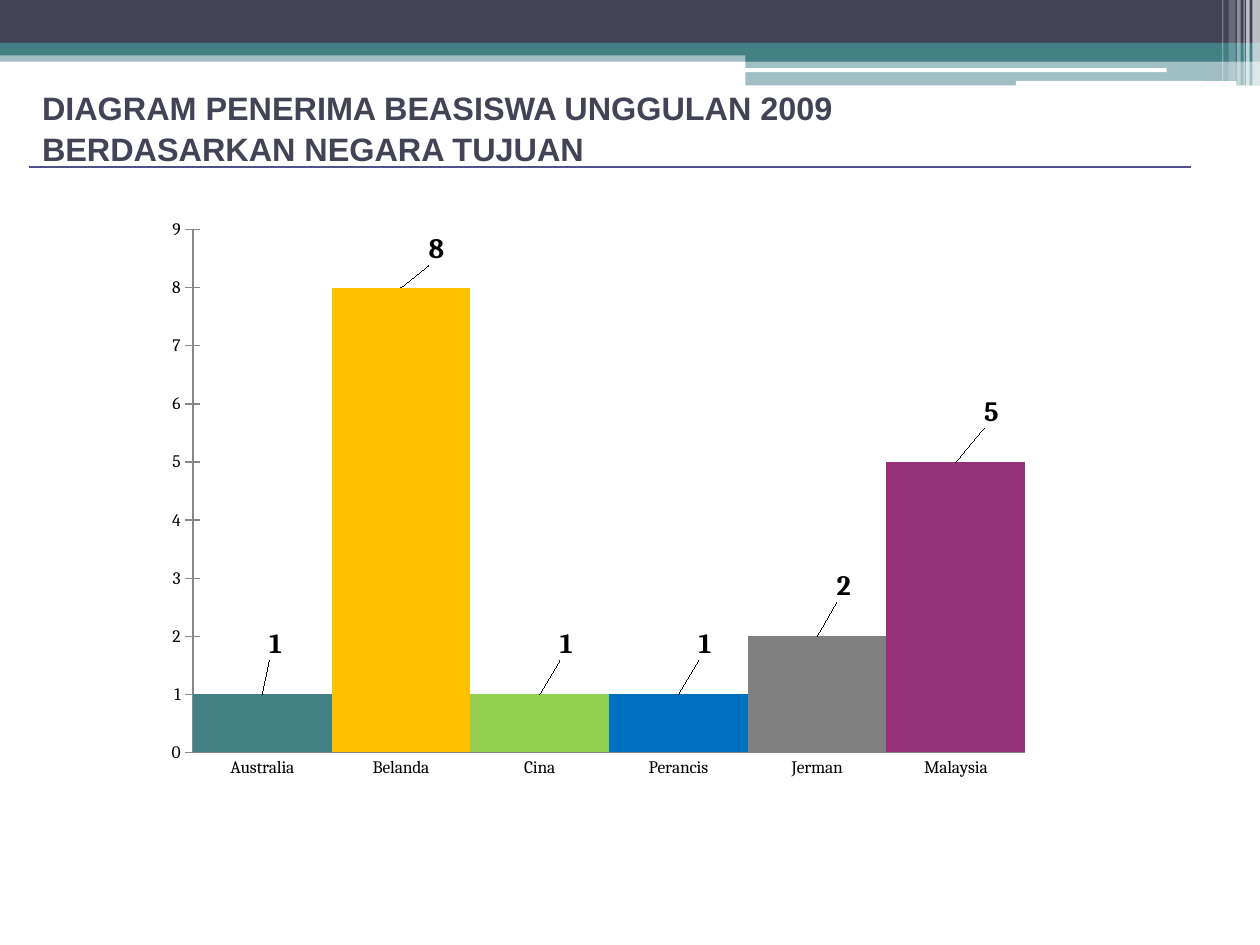
from lxml import etree
from pptx import Presentation
from pptx.chart.data import CategoryChartData
from pptx.dml.color import RGBColor
from pptx.enum.chart import XL_CHART_TYPE, XL_LABEL_POSITION, XL_TICK_MARK
from pptx.enum.shapes import MSO_CONNECTOR, MSO_SHAPE
from pptx.enum.text import MSO_ANCHOR, MSO_AUTO_SIZE, PP_ALIGN
from pptx.oxml import parse_xml
from pptx.oxml.ns import nsdecls, qn
from pptx.util import Pt

RECTANGLE, ROUNDED = MSO_SHAPE.RECTANGLE, MSO_SHAPE.ROUNDED_RECTANGLE
COLUMN = XL_CHART_TYPE.COLUMN_CLUSTERED
OUTSIDE_END = XL_LABEL_POSITION.OUTSIDE_END
TICK_NONE, TICK_CROSS = XL_TICK_MARK.NONE, XL_TICK_MARK.CROSS
TITLE_ONLY = 5

COLORS = {
    "navy": "424456", "teal": "438086", "white": "FFFFFF", "rule": "505188",
    "black": "000000", "axis": "878787", "gold": "FFC000", "green": "92D050",
    "blue": "0070C0", "gray": "808080", "purple": "953178",
}

# Left, top, width, height, color, opacity in percent
BANDS = [
    (0, 28.8, 720, 6.5, "teal", 50),
    (0, 0, 720, 24.5, "navy", 100),
    (0, 24.5, 720, 7.2, "teal", 100),
    (426, 28, 294, 7.2, "teal", 100),
    (426, 35, 294, 13.8, "teal", 50),
]
SLOTS = [(425.5, 39, 241.2, 2.2), (580.5, 46.3, 126, 2.7)]
# Left, width, height, opacity in percent
STRIPES = [
    (715.7, 4.3, 48.8, 65), (712.1, 2, 48.8, 65), (710.6, 0.7, 48.8, 60),
    (707, 2, 48.8, 40), (702, 4, 46.3, 20), (698.4, 0.7, 46.3, 30),
]

# Country, recipients, color, label shift as a share of the chart size
COUNTRIES = [
    ("Australia", 1, "teal", 0.015, -0.05),
    ("Belanda", 8, "gold", 0.04, -0.03),
    ("Cina", 1, "green", 0.03, -0.05),
    ("Perancis", 1, "blue", 0.03, -0.05),
    ("Jerman", 2, "gray", 0.03, -0.05),
    ("Malaysia", 5, "purple", 0.04, -0.05),
]


def rgb(name):
    return RGBColor.from_string(COLORS[name])


def apply_format(target, values):
    for name, value in values.items():
        setattr(target, name, value)


def format_font(font, color, **values):
    apply_format(font, values)
    font.color.rgb = rgb(color)


def add_block(slide, kind, box, color, opacity=100):
    shape = slide.shapes.add_shape(kind, *map(Pt, box))
    shape.shadow.inherit = False
    shape.fill.solid()
    shape.fill.fore_color.rgb = rgb(color)
    shape.line.fill.background()
    if opacity < 100:
        fill_color = shape.fill._xPr.find(qn("a:solidFill"))[0]
        etree.SubElement(fill_color, qn("a:alpha"), val=str(opacity * 1000))


def add_header(slide):
    for *box, color, opacity in BANDS:
        add_block(slide, RECTANGLE, box, color, opacity)
    for box in SLOTS:
        add_block(slide, ROUNDED, box, "white")
    for left, width, height, opacity in STRIPES:
        add_block(slide, RECTANGLE, (left, 0, width, height), "white", opacity)


def add_title(slide, left, top, width, height):
    title = slide.shapes.title
    apply_format(title, {"left": Pt(left), "top": Pt(top),
                         "width": Pt(width), "height": Pt(height)})
    frame = title.text_frame
    frame.text = ("DIAGRAM PENERIMA BEASISWA UNGGULAN 2009\n"
                  "BERDASARKAN NEGARA TUJUAN")
    apply_format(frame, {"word_wrap": True, "auto_size": MSO_AUTO_SIZE.NONE,
                         "vertical_anchor": MSO_ANCHOR.MIDDLE})
    for paragraph in frame.paragraphs:
        apply_format(paragraph, {"alignment": PP_ALIGN.LEFT, "line_spacing": 1.05,
                                 "space_before": Pt(0)})
        format_font(paragraph.runs[0].font, "navy", name="Arial",
                    size=Pt(18.5), bold=True)


def add_rule(slide, left, top, width):
    rule = slide.shapes.add_connector(MSO_CONNECTOR.STRAIGHT, Pt(left), Pt(top),
                                      Pt(left + width), Pt(top))
    rule.line.color.rgb = rgb("rule")
    rule.line.width = Pt(1.25)
    etree.SubElement(rule._element.spPr, qn("a:effectLst"))


def manual_layout(**values):
    parts = "".join(f'<c:{name} val="{value}"/>' for name, value in values.items())
    return parse_xml(f'<c:layout {nsdecls("c")}><c:manualLayout>{parts}'
                     "</c:manualLayout></c:layout>")


def add_country_chart(slide, left, top, width, height):
    data = CategoryChartData()
    data.categories = [country[0] for country in COUNTRIES]
    data.add_series("Series 1", [country[1] for country in COUNTRIES])
    chart = slide.shapes.add_chart(COLUMN, *map(Pt, (left, top, width, height)),
                                   data).chart
    apply_format(chart, {"has_legend": False, "has_title": False})
    format_font(chart.font, "black", name="Cambria", size=Pt(10))

    # Axes
    category_axis, value_axis = chart.category_axis, chart.value_axis
    apply_format(category_axis, {"major_tick_mark": TICK_NONE})
    apply_format(value_axis, {"major_tick_mark": TICK_CROSS,
                              "has_major_gridlines": False, "minimum_scale": 0,
                              "maximum_scale": 9, "major_unit": 1})
    for axis in (category_axis, value_axis):
        axis.format.line.color.rgb = rgb("axis")
        axis.format.line.width = Pt(0.75)

    # Columns and their labels
    plot = chart.plots[0]
    apply_format(plot, {"gap_width": 0, "vary_by_categories": False})
    label_font = {"name": "Cambria", "size": Pt(16), "bold": True}
    for index, (_, _, color, _, _) in enumerate(COUNTRIES):
        point = plot.series[0].points[index]
        point.format.fill.solid()
        point.format.fill.fore_color.rgb = rgb(color)
        format_font(point.data_label.font, "black", **label_font)
        point.data_label.position = OUTSIDE_END
    labels = plot.series[0].data_labels
    apply_format(labels, {"show_value": True, "position": OUTSIDE_END})
    format_font(labels.font, "black", **label_font)

    # Manual places of the labels and the plot area
    for label, country in zip(chart.element.iter(qn("c:dLbl")), COUNTRIES):
        label.insert(1, manual_layout(x=country[3], y=country[4]))
    plot_area = next(chart.element.iter(qn("c:plotArea")))
    for layout in plot_area.findall(qn("c:layout")):
        plot_area.remove(layout)
    plot_area.insert(0, manual_layout(layoutTarget="inner", xMode="edge",
                                      yMode="edge", x=0.04, y=0.04, w=0.94, h=0.9))


def main():
    presentation = Presentation()
    apply_format(presentation, {"slide_width": Pt(720), "slide_height": Pt(540)})
    slide = presentation.slides.add_slide(presentation.slide_layouts[TITLE_ONLY])
    add_header(slide)
    add_title(slide, 16.8, 50.4, 584.6, 44.6)
    add_rule(slide, 16.8, 95.6, 663.8)
    add_country_chart(slide, 90, 118, 506, 332)
    presentation.save("out.pptx")


if __name__ == "__main__":
    main()
